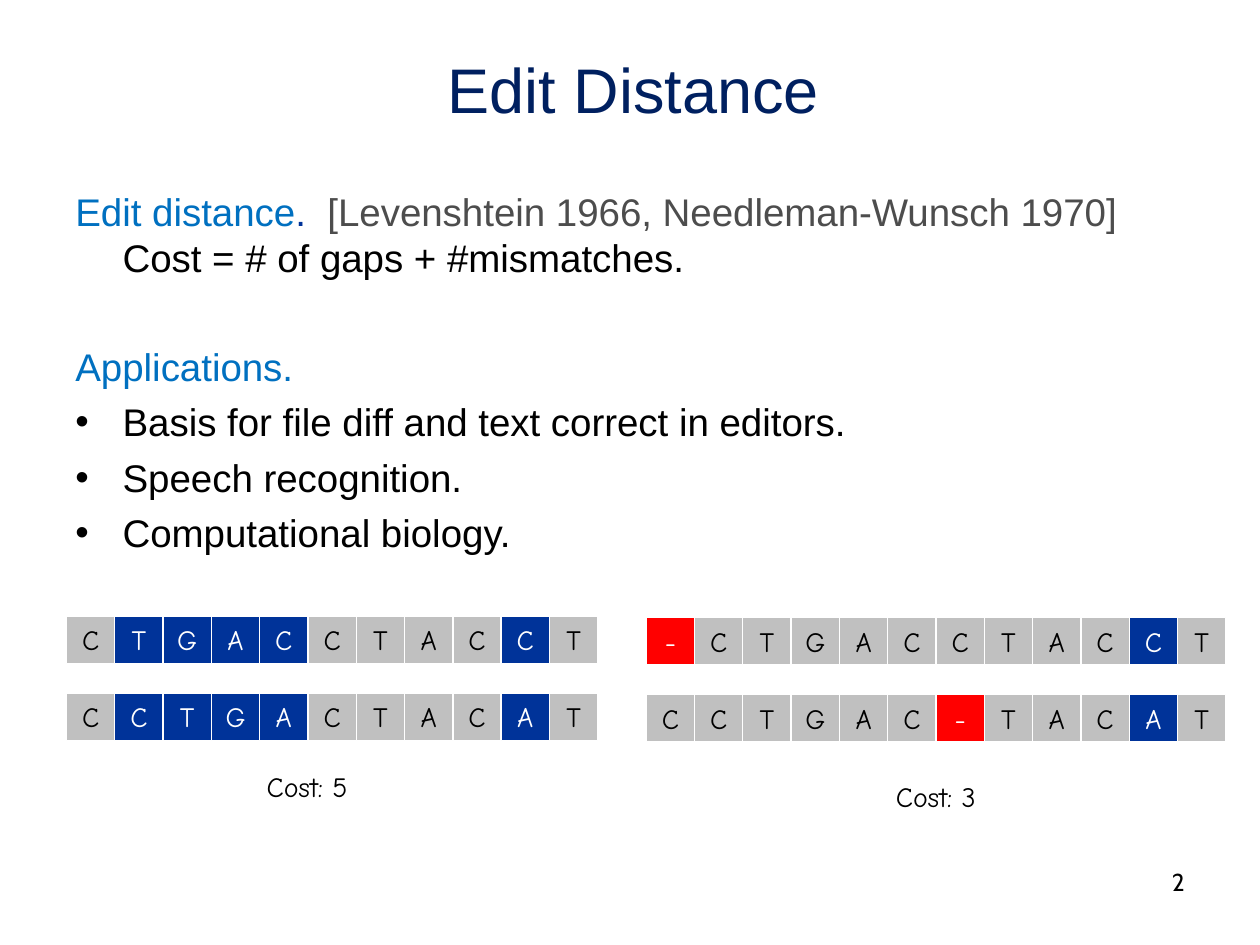
from lxml import etree
from pptx import Presentation
from pptx.dml.color import RGBColor
from pptx.enum import shapes, text
from pptx.oxml import ns
from pptx.util import Pt

COLORS = {
    "navy": "002060", "heading": "0070C0", "blue": "003399", "citation": "4D4D4D",
    "black": "000000", "white": "FFFFFF", "match": "C0C0C0", "gap": "FF0000",
}
CELL = 27.6
ROW_STEP = 44


def rgb(name):
    """Return the named colour."""
    return RGBColor.from_string(COLORS[name])


def set_font(font, name, size, color):
    """Set face, size and colour of a font."""
    font.name, font.size = name, Pt(size)
    font.color.rgb = rgb(color)


def add_text_box(page, box):
    """Add a wrapping text box and return its frame."""
    frame = page.shapes.add_textbox(*map(Pt, box)).text_frame
    frame.word_wrap = True
    return frame


def add_line(page, box, words, font, align):
    """Add a text box that holds one line."""
    frame = add_text_box(page, box)
    para = frame.paragraphs[0]
    para.text, para.alignment = words, align
    set_font(para.font, *font)
    return frame


def indent(para, left, first=0, bullet=None):
    """Indent a paragraph and give it a bullet if one is named."""
    props = para._p.get_or_add_pPr()
    props.set("marL", str(Pt(left)))
    props.set("indent", str(Pt(first)))
    if bullet:
        etree.SubElement(props, ns.qn("a:buFont")).set("typeface", "Arial")
        etree.SubElement(props, ns.qn("a:buChar")).set("char", bullet)


def add_body(page, box):
    """Write the definition and the list of applications."""
    frame = add_text_box(page, box)
    definition = frame.paragraphs[0]
    definition.line_spacing = Pt(26)
    for words, color in (
        ("Edit distance", "heading"),
        (".  ", "blue"),
        ("[Levenshtein 1966, Needleman-Wunsch 1970]", "citation"),
    ):
        span = definition.add_run()
        span.text = words
        set_font(span.font, "Arial", 22, color)

    cost = frame.add_paragraph()
    cost.text, cost.line_spacing = "Cost = # of gaps + #mismatches.", Pt(26)
    set_font(cost.font, "Arial", 22, "black")
    indent(cost, 27)

    heading = frame.add_paragraph()
    heading.text, heading.space_before = "Applications.", Pt(36)
    set_font(heading.font, "Arial", 22, "heading")

    for words in (
        "Basis for file diff and text correct in editors.",
        "Speech recognition.",
        "Computational biology.",
    ):
        item = frame.add_paragraph()
        item.text, item.space_before = words, Pt(5.3)
        set_font(item.font, "Arial", 22, "black")
        indent(item, 27, -27, "•")


def add_cell(page, box, words, fill=None):
    """Add a white-edged rectangle with centred text."""
    cell = page.shapes.add_shape(shapes.MSO_SHAPE.RECTANGLE, *map(Pt, box))
    cell.shadow.inherit = False
    cell.line.color.rgb, cell.line.width = rgb("white"), Pt(0.75)
    if fill:
        cell.fill.solid()
        cell.fill.fore_color.rgb = rgb(fill)
    else:
        cell.fill.background()
    frame = cell.text_frame
    frame.word_wrap = False
    frame.vertical_anchor = text.MSO_ANCHOR.MIDDLE
    para = frame.paragraphs[0]
    para.text, para.alignment = words, text.PP_ALIGN.CENTER
    set_font(para.font, "Comic Neue", 16, "white" if fill in ("blue", "gap") else "black")


def cell_fill(letter, partner):
    """Choose a fill for a gap, a match or a mismatch."""
    if letter == "-":
        return "gap"
    return "match" if partner in (letter, "-") else "blue"


def add_alignment(page, left, top, pair, label, label_box):
    """Draw two aligned sequences with their cost below."""
    for row, (sequence, other) in enumerate((pair, pair[::-1])):
        for column, (letter, partner) in enumerate(zip(sequence, other)):
            box = (left + column * CELL, top + row * ROW_STEP, CELL, 27)
            add_cell(page, box, letter, cell_fill(letter, partner))
    add_cell(page, label_box, label)


def main():
    """Build and save the slide."""
    deck = Presentation()
    deck.slide_width, deck.slide_height = Pt(720), Pt(540)
    page = deck.slides.add_slide(deck.slide_layouts[6])
    title = add_line(page, (20, 21.6, 684, 90), "Edit Distance",
                     ("Arial", 36, "navy"), text.PP_ALIGN.CENTER)
    title.margin_top = Pt(7.5)
    add_body(page, (36, 104.4, 648, 378))
    add_alignment(page, 38, 352, ("CTGACCTACCT", "CCTGACTACAT"),
                  "Cost: 5", (10, 435.6, 331, 27))
    add_alignment(page, 369.3, 353, ("-CTGACCTACCT", "CCTGAC-TACAT"),
                  "Cost: 3", (369.3, 441.4, 331, 27))
    add_line(page, (516, 492, 168, 37.5), "2", ("Cabin", 14, "black"), text.PP_ALIGN.RIGHT)
    deck.save("out.pptx")


if __name__ == "__main__":
    main()
